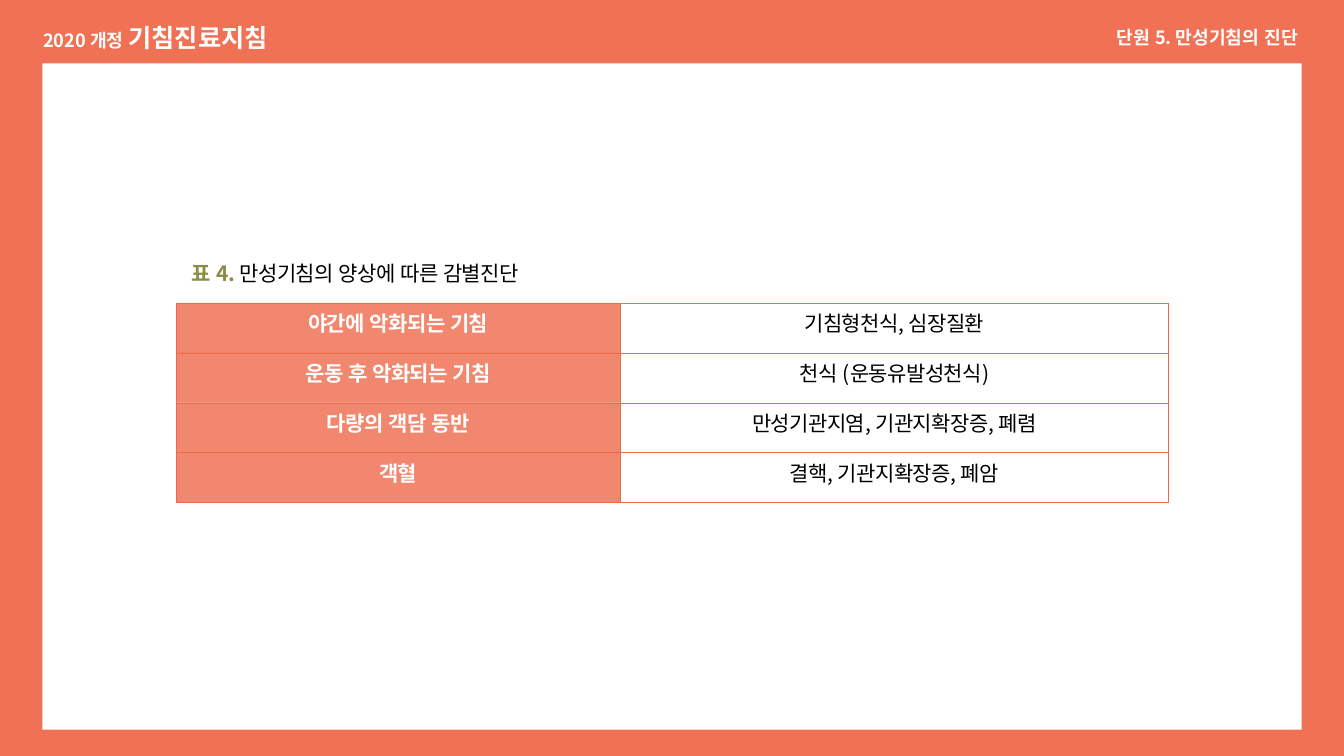
from lxml import etree
from pptx import Presentation
from pptx.dml.color import RGBColor
from pptx.enum.shapes import MSO_SHAPE
from pptx.enum.text import MSO_ANCHOR, MSO_AUTO_SIZE, PP_ALIGN
from pptx.oxml.ns import qn
from pptx.util import Inches, Pt

RECT = MSO_SHAPE.RECTANGLE
TOP, MIDDLE = MSO_ANCHOR.TOP, MSO_ANCHOR.MIDDLE
GROW = MSO_AUTO_SIZE.SHAPE_TO_FIT_TEXT
LEFT, RIGHT = PP_ALIGN.LEFT, PP_ALIGN.RIGHT
CENTER, JUSTIFY = PP_ALIGN.CENTER, PP_ALIGN.JUSTIFY

FONT = "Noto Sans CJK KR"
CORAL = RGBColor(0xEF, 0x6A, 0x4B)
BACK = RGBColor(0xF0, 0x71, 0x54)
OLIVE = RGBColor(0x8B, 0x8C, 0x45)
WHITE = RGBColor(0xFF, 0xFF, 0xFF)
BLACK = RGBColor(0, 0, 0)

ROWS = [
    ("야간에 악화되는 기침", "기침형천식, 심장질환"),
    ("운동 후 악화되는 기침", "천식 (운동유발성천식)"),
    ("다량의 객담 동반", "만성기관지염, 기관지확장증, 폐렴"),
    ("객혈", "결핵, 기관지확장증, 폐암"),
]
CAPTION = [("표 4.", 15, OLIVE, True),
           (" 만성기침의 양상에 따른 감별진단", 15, BLACK, False)]


def write(para, parts, align, gap=None):
    """Fill a paragraph with (text, size, colour, bold) runs."""
    para.alignment = align
    for text, size, color, bold in parts:
        run = para.add_run()
        run.text = text
        font = run.font
        font.name, font.size, font.bold = FONT, Pt(size), bold
        font.color.rgb = color
        props = font._element
        props.set("lang", "ko-KR")
        if gap:
            props.set("spc", str(gap))
        east = etree.Element(qn("a:ea"), typeface=FONT)
        props.find(qn("a:latin")).addnext(east)


def add_panel(slide):
    panel = slide.shapes.add_shape(
        RECT, Inches(0.42), Inches(0.63), Inches(12.49), Inches(6.61))
    panel.shadow.inherit = False
    panel.fill.solid()
    panel.fill.fore_color.rgb = WHITE
    panel.line.fill.background()


def add_label(slide, left, top, height, parts, align):
    box = slide.shapes.add_textbox(
        Inches(left), Inches(top), Inches(6.46), Inches(height))
    frame = box.text_frame
    frame.word_wrap = True
    frame.auto_size = GROW
    write(frame.paragraphs[0], parts, align)


def set_edges(cell, edges):
    """Draw cell borders, given as (side, colour, points) in L, R, T, B order."""
    props = cell._tc.get_or_add_tcPr()
    for spot, (side, color, width) in enumerate(edges):
        line = etree.Element(qn("a:ln" + side), w=str(Pt(width)))
        fill = etree.SubElement(line, qn("a:solidFill"))
        etree.SubElement(fill, qn("a:srgbClr"), val=str(color))
        props.insert(spot, line)


def fill_cell(cell, parts, align, anchor=TOP, tint=False):
    cell.margin_left = cell.margin_right = Inches(0.15)
    cell.margin_top = cell.margin_bottom = Inches(0.15)
    cell.vertical_anchor = anchor
    if tint:
        cell.fill.solid()
        cell.fill.fore_color.rgb = CORAL
        shade = cell._tc.tcPr.find(".//" + qn("a:srgbClr"))
        etree.SubElement(shade, qn("a:alpha"), val="80000")
    else:
        cell.fill.background()
    para = cell.text_frame.paragraphs[0]
    para.line_spacing = Pt(14)
    write(para, parts, align, gap=-40)


def add_grid(slide):
    count = len(ROWS) + 1
    height = Inches(2.47)
    table = slide.shapes.add_table(
        count, 2, Inches(1.75), Inches(2.51), Inches(9.84), height).table
    table.first_row = table.horz_banding = False
    for col, width in zip(table.columns, (4.4, 5.44)):
        col.width = Inches(width)
    for row in table.rows:
        row.height = height // count

    # Caption row, framed in white above the grid
    head = table.cell(0, 0)
    head.merge(table.cell(0, 1))
    fill_cell(head, CAPTION, JUSTIFY)
    for col in range(2):
        set_edges(table.cell(0, col), [
            ("L", WHITE, 1), ("R", WHITE, 1),
            ("T", WHITE, 1), ("B", CORAL, 0.25)])

    # Symptom and diagnosis rows
    for idx, (sign, cause) in enumerate(ROWS, 1):
        fill_cell(table.cell(idx, 0), [(sign, 15, WHITE, True)],
                  CENTER, MIDDLE, tint=True)
        fill_cell(table.cell(idx, 1), [(cause, 15, BLACK, False)], CENTER)
        for col in range(2):
            set_edges(table.cell(idx, col),
                      [(side, CORAL, 0.25) for side in "LRTB"])


def main():
    deck = Presentation()
    deck.slide_width, deck.slide_height = Inches(13.33), Inches(7.5)
    slide = deck.slides.add_slide(deck.slide_layouts[6])

    # Background and white panel
    slide.background.fill.solid()
    slide.background.fill.fore_color.rgb = BACK
    add_panel(slide)

    # Header labels
    add_label(slide, 0.33, 0.17, 0.4,
              [("2020 개정 ", 13, WHITE, True),
               ("기침진료지침", 18, WHITE, True)], LEFT)
    add_label(slide, 6.51, 0.21, 0.32,
              [("단원 5. 만성기침의 진단", 13, WHITE, True)], RIGHT)

    add_grid(slide)
    deck.save("out.pptx")


if __name__ == "__main__":
    main()
